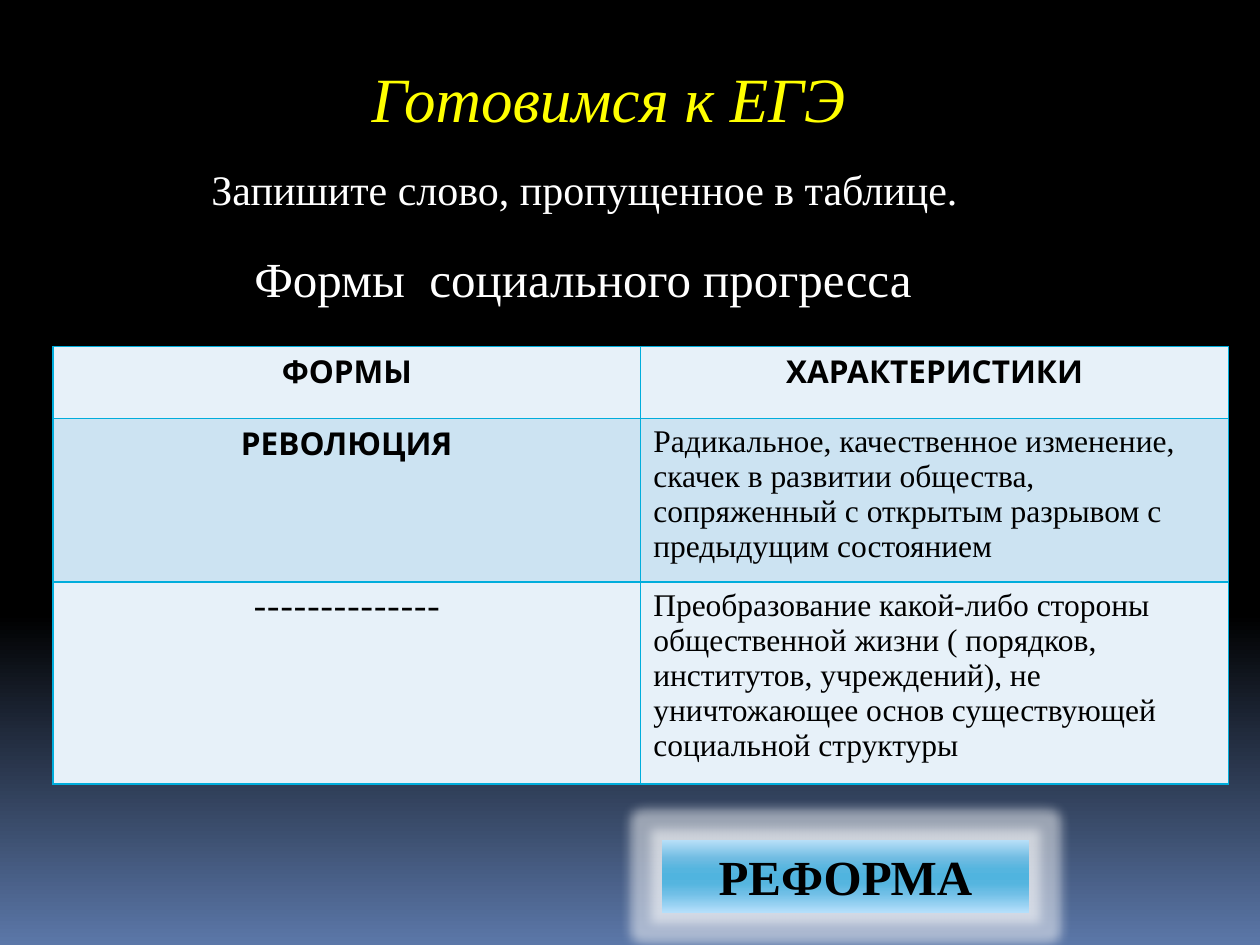
from lxml.etree import SubElement
from pptx import Presentation
from pptx.dml.color import RGBColor
from pptx.enum.shapes import MSO_SHAPE
from pptx.enum.text import MSO_ANCHOR, PP_ALIGN
from pptx.oxml.ns import qn
from pptx.util import Inches, Pt

SERIF, SANS = "Times New Roman", "Cabin"
TITLE = ("Готовимся к ЕГЭ", (2.83, 0.42, 4, 0.71))
LINES = [
    ("Запишите слово, пропущенное в таблице.", 24, (1.58, 1.25, 6.19, 0.5)),
    ("Формы  социального прогресса", 28, (1.92, 1.92, 5.47, 0.57)),
]
ROWS = [
    ("ФОРМЫ", "ХАРАКТЕРИСТИКИ"),
    ("РЕВОЛЮЦИЯ", "Радикальное, качественное изменение, скачек в развитии общества, "
     "сопряженный с открытым разрывом с предыдущим состоянием"),
    ("--------------", "Преобразование какой-либо стороны общественной жизни "
     "( порядков, институтов, учреждений), не уничтожающее основ "
     "существующей социальной структуры"),
]
ROW_HEIGHTS = [0.57, 1.3, 1.6]
TABLE_BOX = (0.42, 2.75, 9.33, 3.47)
BANDS = ["E7F1F9", "CCE3F2"]
BORDER = "00ADDC"
ANSWER = ("РЕФОРМА", (5.25, 6.67, 2.92, 0.57))
BACKGROUND = [(0, "000000"), (65, "000000"), (100, "5B77A8")]
BUTTON = [(0, "B7DFF8"), (25, "70BCE2"), (40, "55B5DF"), (50, "50B4DF"),
          (60, "55B5DF"), (75, "72C0E7"), (100, "B4DFFB")]


def rgb(value):
    return RGBColor.from_string(value)


def box(values):
    return [Inches(v) for v in values]


def write(tf, text, size, font=SERIF, color="FFFFFF", bold=False, italic=False,
          align=PP_ALIGN.LEFT):
    p = tf.paragraphs[0]
    p.text, p.alignment = text, align
    p.font.name, p.font.size = font, Pt(size)
    p.font.bold, p.font.italic = bold, italic
    p.font.color.rgb = rgb(color)


def add_color(parent, value):
    return SubElement(parent, qn("a:srgbClr"), val=value)


def set_gradient(fill, element, stops):
    fill.gradient()
    fill.gradient_angle = 270
    stop_list = next(element.iter(qn("a:gsLst")))
    for stop in list(stop_list):
        stop_list.remove(stop)
    for position, value in stops:
        add_color(SubElement(stop_list, qn("a:gs"), pos=str(position * 1000)), value)


def set_borders(cell):
    tcPr = cell._tc.get_or_add_tcPr()
    for i, side in enumerate(("lnL", "lnR", "lnT", "lnB")):
        line = tcPr.makeelement(qn(f"a:{side}"), {"w": str(Pt(1))})
        add_color(SubElement(line, qn("a:solidFill")), BORDER)
        tcPr.insert(i, line)


def add_forms_table(s):
    table = s.shapes.add_table(len(ROWS), 2, *box(TABLE_BOX)).table
    for i, (row, height) in enumerate(zip(ROWS, ROW_HEIGHTS)):
        table.rows[i].height = Inches(height)
        for j, text in enumerate(row):
            cell = table.cell(i, j)
            cell.fill.solid()
            cell.fill.fore_color.rgb = rgb(BANDS[i % 2])
            heading = i == 0 or j == 0
            write(cell.text_frame, text, 18, SANS if heading else SERIF, "000000",
                  bold=heading and i < 2,
                  align=PP_ALIGN.CENTER if heading else PP_ALIGN.LEFT)
            set_borders(cell)


def add_answer(s):
    text, place = ANSWER
    sp = s.shapes.add_shape(MSO_SHAPE.RECTANGLE, *box(place))
    sp.shadow.inherit = False
    set_gradient(sp.fill, sp._element, BUTTON)
    sp.line.fill.background()
    effects = sp._element.spPr.find(qn("a:effectLst"))
    glow = SubElement(effects, qn("a:glow"), rad=str(Inches(0.17)))
    SubElement(add_color(glow, "FFFFFF"), qn("a:alpha"), val="50000")
    write(sp.text_frame, text, 28, color="000000", bold=True, align=PP_ALIGN.CENTER)


def main():
    prs = Presentation()
    prs.slide_width, prs.slide_height = Inches(10), Inches(7.5)
    s = prs.slides.add_slide(prs.slide_layouts[5])
    set_gradient(s.background.fill, s._element, BACKGROUND)

    text, place = TITLE
    title = s.shapes.title
    title.left, title.top, title.width, title.height = box(place)
    title.text_frame.word_wrap = False
    title.text_frame.vertical_anchor = MSO_ANCHOR.TOP
    write(title.text_frame, text, 36, color="FFFF00", italic=True, align=PP_ALIGN.CENTER)

    for text, size, place in LINES:
        tf = s.shapes.add_textbox(*box(place)).text_frame
        tf.word_wrap = False
        write(tf, text, size)

    add_forms_table(s)
    add_answer(s)
    prs.save("out.pptx")


if __name__ == "__main__":
    main()
